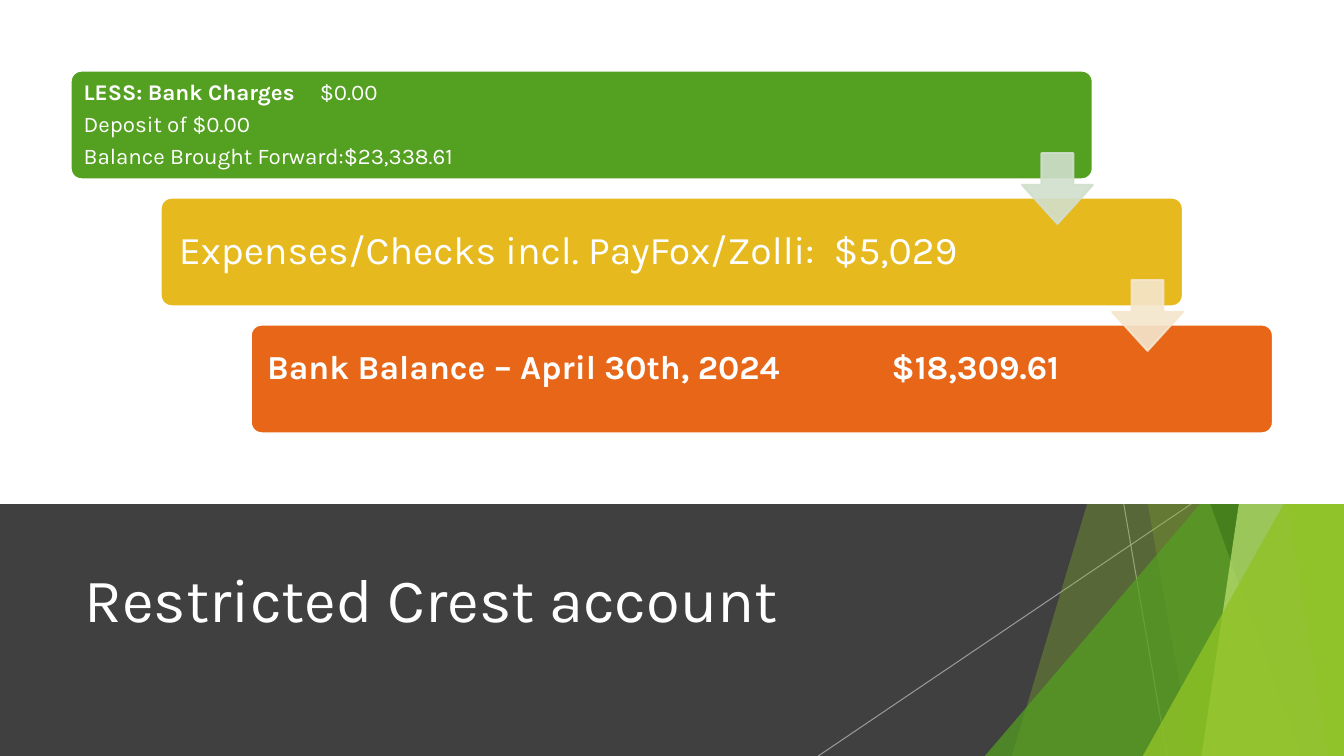
from lxml import etree
from pptx import Presentation
from pptx.dml.color import RGBColor
from pptx.enum.shapes import MSO_CONNECTOR, MSO_SHAPE
from pptx.enum.text import MSO_ANCHOR, MSO_AUTO_SIZE, PP_ALIGN
from pptx.oxml.ns import qn
from pptx.util import Cm, Pt

RECTANGLE = MSO_SHAPE.RECTANGLE
ROUNDED = MSO_SHAPE.ROUNDED_RECTANGLE
TRIANGLE = MSO_SHAPE.ISOSCELES_TRIANGLE
DOWN_ARROW = MSO_SHAPE.DOWN_ARROW
STRAIGHT = MSO_CONNECTOR.STRAIGHT
MIDDLE = MSO_ANCHOR.MIDDLE
LEFT = PP_ALIGN.LEFT
NO_FIT = MSO_AUTO_SIZE.NONE

WIDTH, HEIGHT, SPLIT = 33.87, 19.05, 12.7
FONT, WHITE, DARK, GREY = "Karla", "FFFFFF", "404040", "BFBFBF"

TITLE = "Restricted Crest account"
STEPS = [
    {"fill": "54A021", "size": 16, "inset": 0.25, "bottom": 0.25, "tab": 5.95,
     "lines": [[("LESS: Bank Charges", True), ("\t$0.00", False)],
               [("Deposit of $0.00", False)],
               [("Balance Brought Forward:$23,338.61", False)]]},
    {"fill": "E6B91E", "size": 28, "inset": 0.38, "bottom": 0.38, "tab": 16.5,
     "lines": [[("Expenses/Checks incl. PayFox/Zolli:\t$5,029", False)]]},
    {"fill": "E76618", "size": 24, "inset": 0.33, "bottom": 0.84, "tab": 15.74,
     "lines": [[("Bank Balance – April 30th, 2024\t$18,309.61", True)]]},
]
ARROWS = ["D1DFCD", "F5E6CD"]
STEP_START, STEP_RIGHT, STEP_DOWN = 1.78, 2.27, 3.2
STEP_WIDTH, STEP_HEIGHT = 25.76, 2.74
ARROW_LEFT, ARROW_TOP, ARROW_SIZE = 25.76, 3.86, 1.78

RAYS = [(28.32, SPLIT, 29.41, HEIGHT), (30.02, SPLIT, 20.62, HEIGHT)]
FACETS = [
    ("slant", (31.19, 25.5), "90C226", 30),
    ("slant", (26.67, 30.05), "90C226", 20),
    ("triangle", (24.82, 8.46), "54A021", 72),
    ("slant", (25.93, 32.79), "3F7819", 70),
    ("slant", (33.1, 30.28), "C0E474", 70),
    ("slant", (30.38, 33.48), "90C226", 65),
    ("triangle", (28.8, 9.98), "90C226", 80),
]


def color(value):
    return RGBColor.from_string(value)


def fade(fill, percent):
    for node in fill.iter(qn("a:srgbClr")):
        etree.SubElement(node, qn("a:alpha"), val=str(percent * 1000))


def paint(shape, fill, outline=None, opacity=100):
    shape.shadow.inherit = False
    shape.fill.solid()
    shape.fill.fore_color.rgb = color(fill)
    if outline:
        shape.line.color.rgb = color(outline)
        shape.line.width = Pt(1.5)
    else:
        shape.line.fill.background()
    if opacity < 100:
        fade(shape._element.spPr, opacity)


def add_box(page, kind, left, top, width, height, adjustments=()):
    box = page.shapes.add_shape(kind, Cm(left), Cm(top), Cm(width), Cm(height))
    for index, value in enumerate(adjustments):
        box.adjustments[index] = value
    return box


def apply(target, formats):
    for name, value in formats.items():
        setattr(target, name, value)


def style(span, size, bold=False):
    apply(span.font, {"name": FONT, "size": Pt(size), "bold": bold})
    span.font.color.rgb = color(WHITE)


def add_backdrop(page):
    paint(add_box(page, RECTANGLE, 0, SPLIT, WIDTH, HEIGHT - SPLIT), DARK)
    for ray in RAYS:
        line = page.shapes.add_connector(STRAIGHT, *map(Cm, ray))
        line.line.color.rgb = color(GREY)
        line.line.width = Pt(0.75)
        properties = line._element.spPr
        fade(properties, 70)
        etree.SubElement(properties, qn("a:effectLst"))
    for kind, (first, second), fill, opacity in FACETS:
        if kind == "slant":
            outline = page.shapes.build_freeform(Cm(first), 0)
            outline.add_line_segments([(Cm(WIDTH), 0), (Cm(WIDTH), Cm(HEIGHT)),
                                       (Cm(second), Cm(HEIGHT))])
            facet = outline.convert_to_shape()
        else:
            facet = add_box(page, TRIANGLE, first, second,
                            WIDTH - first, HEIGHT - second, [1])
        paint(facet, fill, opacity=opacity)
    paint(add_box(page, RECTANGLE, 0, 0, WIDTH, SPLIT), WHITE)


def place_title(page):
    title = page.shapes.title
    apply(title, {"left": Cm(1.88), "top": Cm(13.23),
                  "width": Cm(23.88), "height": Cm(3.66)})
    frame = title.text_frame
    apply(frame, {"text": TITLE, "vertical_anchor": MIDDLE,
                  "auto_size": NO_FIT, "word_wrap": True})
    para = frame.paragraphs[0]
    para.alignment = LEFT
    style(para.runs[0], 44)
    title._element.getparent().append(title._element)


def add_step(page, index, step):
    box = add_box(page, ROUNDED, STEP_START + index * STEP_RIGHT,
                  STEP_START + index * STEP_DOWN, STEP_WIDTH, STEP_HEIGHT, [0.1])
    paint(box, step["fill"], WHITE)
    frame = box.text_frame
    apply(frame, {"vertical_anchor": MIDDLE, "word_wrap": True,
                  "margin_left": Cm(step["inset"]), "margin_right": Cm(step["inset"]),
                  "margin_top": Cm(step["inset"]), "margin_bottom": Cm(step["bottom"])})
    for number, line in enumerate(step["lines"]):
        para = frame.add_paragraph() if number else frame.paragraphs[0]
        apply(para, {"alignment": LEFT, "line_spacing": 0.9,
                     "space_after": Pt(step["size"] * 0.35)})
        if any("\t" in text for text, bold in line):
            tabs = etree.SubElement(para._p.get_or_add_pPr(), qn("a:tabLst"))
            etree.SubElement(tabs, qn("a:tab"), pos=str(Cm(step["tab"])), algn="l")
        for text, bold in line:
            span = para.add_run()
            span.text = text
            style(span, step["size"], bold)


def main():
    deck = Presentation()
    deck.slide_width, deck.slide_height = Cm(WIDTH), Cm(HEIGHT)
    page = deck.slides.add_slide(deck.slide_layouts[5])
    add_backdrop(page)
    place_title(page)
    for index, step in enumerate(STEPS):
        add_step(page, index, step)
    for index, fill in enumerate(ARROWS):
        arrow = add_box(page, DOWN_ARROW, ARROW_LEFT + index * STEP_RIGHT,
                        ARROW_TOP + index * STEP_DOWN, ARROW_SIZE, ARROW_SIZE)
        arrow.adjustments[0], arrow.adjustments[1] = 0.45, 0.55
        paint(arrow, fill, fill, 90)
    deck.save("out.pptx")


if __name__ == "__main__":
    main()
